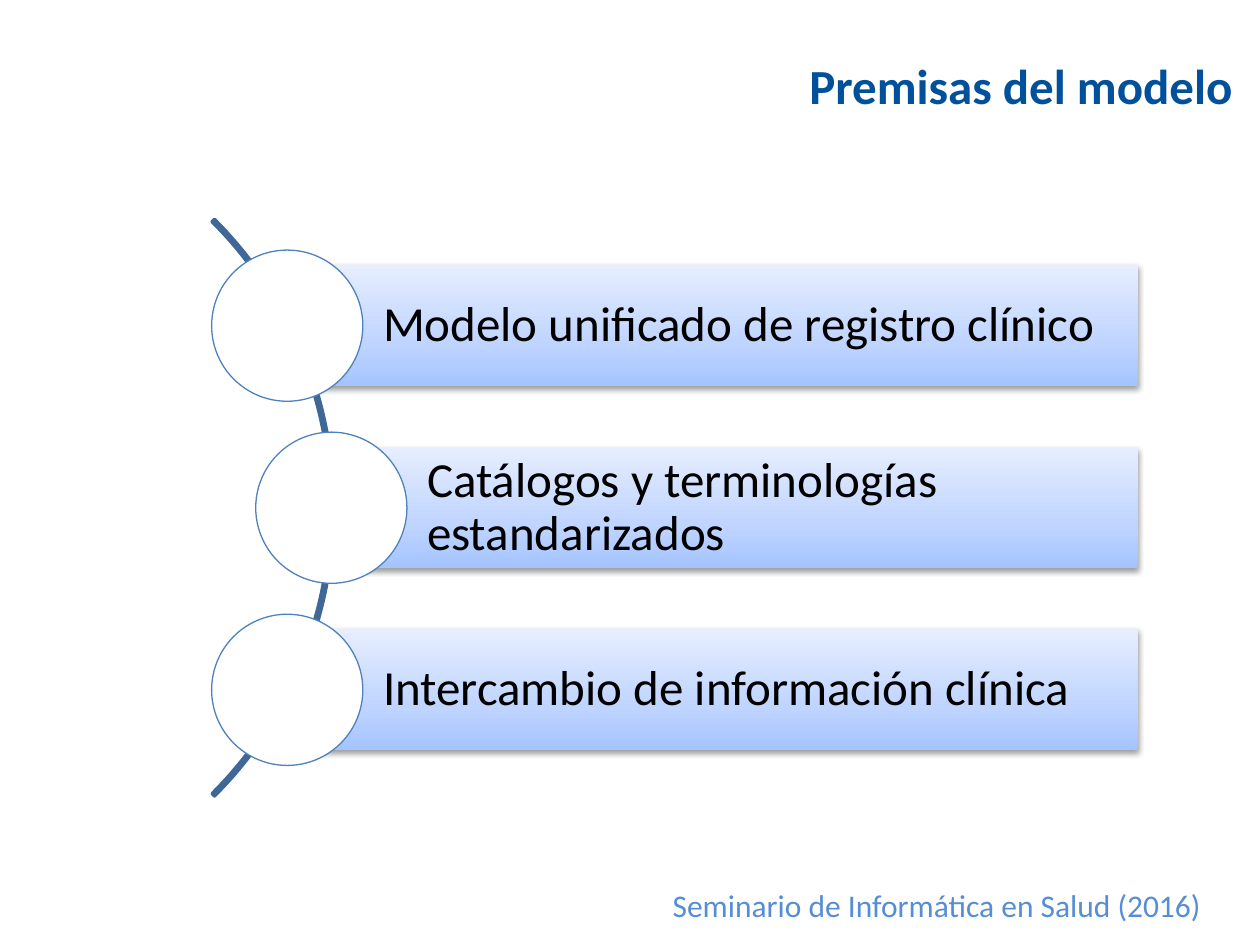
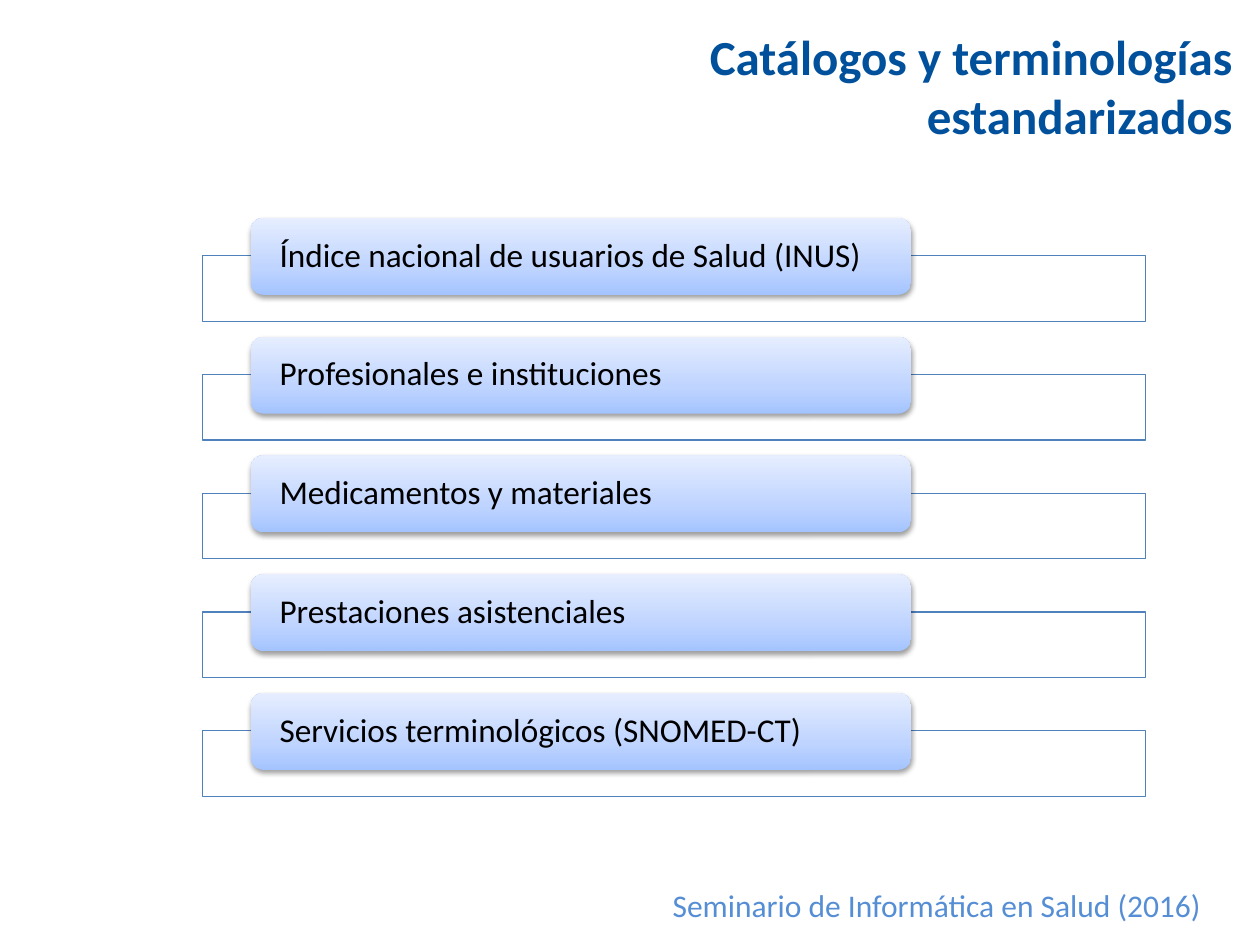
from copy import deepcopy
from dataclasses import dataclass

from lxml.etree import SubElement
from pptx import Presentation
from pptx.dml.color import RGBColor
from pptx.enum.shapes import MSO_SHAPE as SHAPE
from pptx.enum.text import MSO_ANCHOR as ANCHOR, MSO_AUTO_SIZE as AUTO, PP_ALIGN as ALIGN
from pptx.oxml.ns import qn
from pptx.util import Inches, Pt


@dataclass(frozen=True)
class Theme:
    font: str = "Calibri"
    title: str = "01509B"
    footer: str = "558ED5"
    text: str = "000000"
    white: str = "FFFFFF"
    outline: str = "4F81BD"
    arc: str = "3F6797"
    shadow: str = "000000"
    gradient: tuple = ((0, "A4C4FF"), (0.35, "BFD4FF"), (1, "E6EEFF"))
    title_size: int = 28
    premise_size: int = 28
    catalog_size: int = 19
    footer_size: int = 18


THEME = Theme()
TITLE_ONLY = 5
FOOTER = "Seminario de Informática en Salud (2016)"
PREMISES = [
    "Modelo unificado de registro clínico",
    "Catálogos y terminologías estandarizados",
    "Intercambio de información clínica",
]
CATALOGS = [
    "Índice nacional de usuarios de Salud (INUS)",
    "Profesionales e instituciones",
    "Medicamentos y materiales",
    "Prestaciones asistenciales",
    "Servicios terminológicos (SNOMED-CT)",
]


def write(shape, text, size, color, align=ALIGN.LEFT, bold=False):
    p = shape.text_frame.paragraphs[0]
    p.text = text
    p.alignment = align
    p.font.name = THEME.font
    p.font.size = Pt(size)
    p.font.bold = bold
    p.font.color.rgb = RGBColor.from_string(color)
    return p


def add_shape(slide, kind, left, top, width, height, fill=None, line=None, weight=0.75):
    sp = slide.shapes.add_shape(
        kind, Inches(left), Inches(top), Inches(width), Inches(height))
    sp.shadow.inherit = False
    if fill:
        sp.fill.solid()
        sp.fill.fore_color.rgb = RGBColor.from_string(fill)
    else:
        sp.fill.background()
    if line:
        sp.line.color.rgb = RGBColor.from_string(line)
        sp.line.width = Pt(weight)
    else:
        sp.line.fill.background()
    return sp


def set_alpha(color, percent):
    SubElement(color, qn("a:alpha"), val=str(percent * 1000))


def add_bar(slide, kind, box, text, size, margins):
    """Gradient bar with a soft shadow and left-aligned text."""
    sp = add_shape(slide, kind, *box)
    # Three-stop gradient, light at the top
    sp.fill.gradient()
    sp.fill.gradient_angle = 90
    stops = sp._element.spPr.find(".//" + qn("a:gsLst"))
    stops.insert(1, deepcopy(stops[0]))
    for stop, (position, color) in zip(sp.fill.gradient_stops, THEME.gradient):
        stop.position = position
        stop.color.rgb = RGBColor.from_string(color)
    # Shadow below
    effects = sp._element.spPr.find(qn("a:effectLst"))
    shadow = SubElement(effects, qn("a:outerShdw"), blurRad=str(Pt(3.1)),
                        dist=str(Pt(1.6)), dir="5400000", rotWithShape="0")
    set_alpha(SubElement(shadow, qn("a:srgbClr"), val=THEME.shadow), 38)
    # Text
    tf = sp.text_frame
    tf.word_wrap = True
    tf.vertical_anchor = ANCHOR.MIDDLE
    tf.margin_left, tf.margin_top, tf.margin_right, tf.margin_bottom = map(Inches, margins)
    write(sp, text, size, THEME.text).line_spacing = 0.9


def add_slide(prs, title):
    """Slide with the shared title style and footer."""
    slide = prs.slides.add_slide(prs.slide_layouts[TITLE_ONLY])
    sp = slide.shapes.title
    sp.left, sp.top, sp.width, sp.height = map(Inches, (2.47, 0.05, 7.41, 1.25))
    sp.text_frame.auto_size = AUTO.NONE
    sp.text_frame.vertical_anchor = ANCHOR.MIDDLE
    write(sp, title, THEME.title_size, THEME.title, ALIGN.RIGHT, bold=True)

    footer = slide.shapes.add_textbox(*map(Inches, (5.24, 6.98, 4.45, 0.4)))
    footer.text_frame.word_wrap = False
    footer.text_frame.auto_size = AUTO.SHAPE_TO_FIT_TEXT
    write(footer, FOOTER, THEME.footer_size, THEME.footer)
    return slide


def add_premises(slide):
    """Bars headed by circles that follow an arc."""
    center_y, pitch, right = 4.03, 1.445, 9.03
    bar_height, circle, arc_size = 0.96, 1.2, 6.47
    arc = add_shape(slide, SHAPE.BLOCK_ARC, -3.82, center_y - arc_size / 2,
                    arc_size, arc_size, line=THEME.arc, weight=2)
    for i, value in enumerate((189, 27, 0.004)):  # 315° to 45°, thin band
        arc.adjustments[i] = value

    for row, text in enumerate(PREMISES):
        y = center_y + (row - 1) * pitch
        left = 2.63 if row == 1 else 2.28
        add_bar(slide, SHAPE.RECTANGLE,
                (left, y - bar_height / 2, right - left, bar_height),
                text, THEME.premise_size, (0.76, 0.08, 0.08, 0.08))
        add_shape(slide, SHAPE.OVAL, left - circle / 2, y - circle / 2,
                  circle, circle, THEME.white, THEME.outline)


def add_catalogs(slide):
    """Rounded labels, each over an outlined frame."""
    top, pitch = 1.73, 0.9425
    for row, text in enumerate(CATALOGS):
        y = top + row * pitch
        frame = add_shape(slide, SHAPE.RECTANGLE, 1.61, y + 0.3, 7.48, 0.52,
                          THEME.white, THEME.outline)
        set_alpha(frame._element.spPr.find(qn("a:solidFill"))[0], 90)
        add_bar(slide, SHAPE.ROUNDED_RECTANGLE, (1.99, y, 5.24, 0.61),
                text, THEME.catalog_size, (0.2, 0, 0.2, 0))


def main():
    prs = Presentation()
    prs.slide_width, prs.slide_height = Inches(10), Inches(7.5)
    add_premises(add_slide(prs, "Premisas del modelo"))
    add_catalogs(add_slide(prs, "Catálogos y terminologías\vestandarizados"))
    prs.save("out.pptx")


if __name__ == "__main__":
    main()
